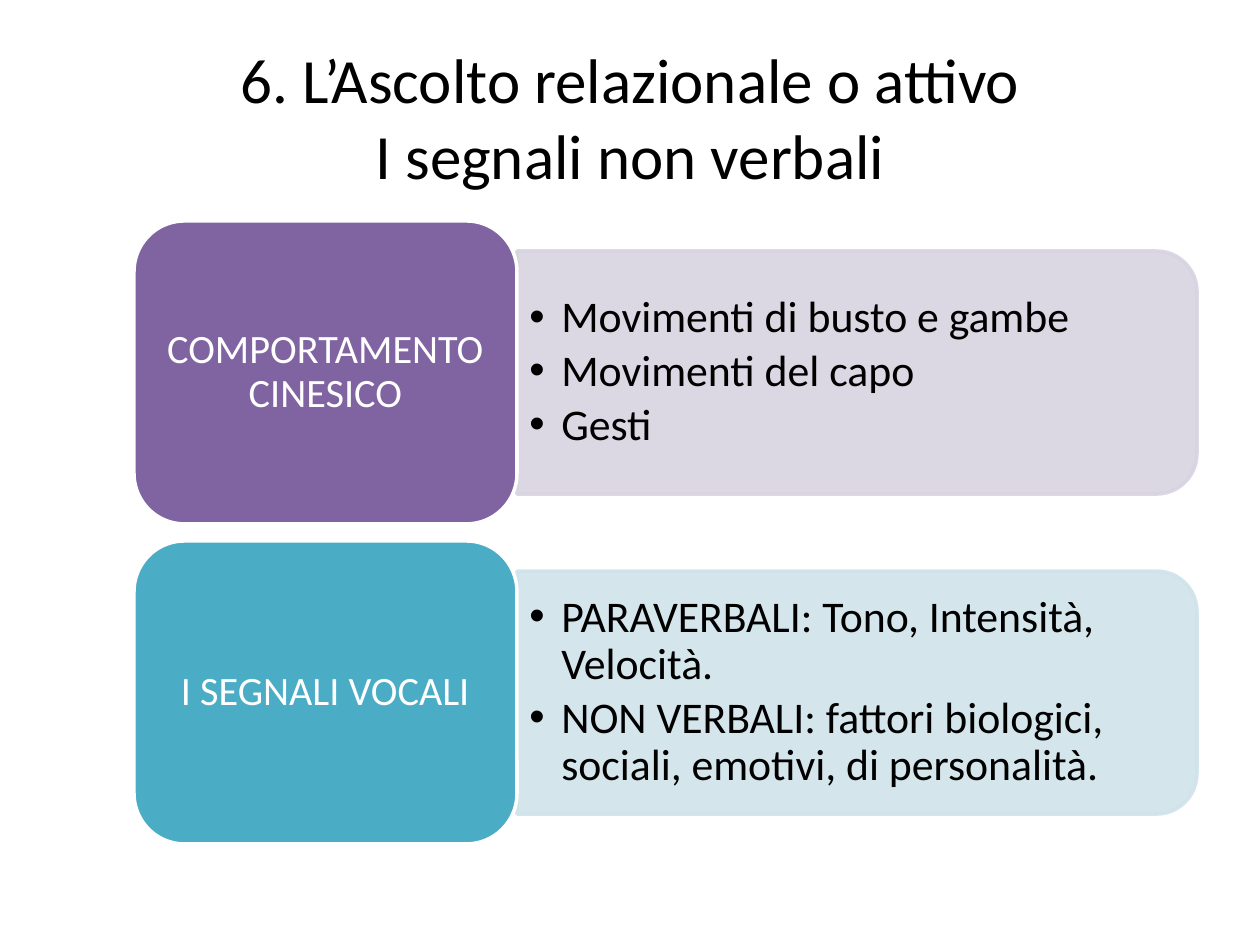
import pptx
import pptx.util
import pptx.dml.color
import pptx.enum.shapes
import pptx.enum.text
import pptx.oxml
import pptx.oxml.ns
from lxml import etree

TITLE = "6. L’Ascolto relazionale o attivo\vI segnali non verbali"
ROWS = [
    ("COMPORTAMENTO CINESICO", "8064A2", "D8D3E0",
     ["Movimenti di busto e gambe", "Movimenti del capo", "Gesti"]),
    ("I SEGNALI VOCALI", "4BACC6", "D0E3EA",
     ["PARAVERBALI: Tono, Intensità, Velocità.",
      "NON VERBALI: fattori biologici, sociali, emotivi, di personalità."]),
]
THEME = {"font": "Calibri", "dark": "000000", "light": "FFFFFF",
         "title": 36, "tile": 23, "item": 25, "line": 2, "alpha": 90}

# Lengths in px, 126 to the inch
SLIDE = (1260, 945)
HEAD = (63, 38, 1134, 157)
LEFT, TOP, STEP = 134, 221, 320
TILE = (383, 303)
PANEL = (680, 243)
NOTE = (669, 219)
INDENT = 32

SHAPE = pptx.enum.shapes.MSO_SHAPE
ALIGN = pptx.enum.text.PP_ALIGN
MIDDLE = pptx.enum.text.MSO_ANCHOR.MIDDLE
Pt = pptx.util.Pt
qn = pptx.oxml.ns.qn


def px(n):
    return pptx.util.Emu(round(n * 914400 / 126))


def box(*nums):
    return [px(n) for n in nums]


def rgb(code):
    return pptx.dml.color.RGBColor.from_string(code)


def style(frame, size, color, align):
    """Set the anchor, wrap, font and alignment of all text in a frame."""
    frame.word_wrap = True
    frame.vertical_anchor = MIDDLE
    for para in frame.paragraphs:
        para.alignment = align
        for run in para.runs:
            run.font.name = THEME["font"]
            run.font.size = Pt(size)
            run.font.color.rgb = rgb(color)


def paint(shape, fill, line):
    shape.shadow.inherit = False
    shape.fill.solid()
    shape.fill.fore_color.rgb = rgb(fill)
    shape.line.color.rgb = rgb(line)
    shape.line.width = Pt(THEME["line"])


def fade(shape):
    """Make the fill and the line slightly see-through."""
    for tone in shape.element.spPr.iter(qn("a:srgbClr")):
        etree.SubElement(tone, qn("a:alpha"), val=str(THEME["alpha"] * 1000))


def bullet(para):
    para.line_spacing = 0.9
    para.space_after = Pt(THEME["item"] * 0.15)
    props = para._p.get_or_add_pPr()
    props.set("marL", str(px(INDENT)))
    props.set("indent", str(-px(INDENT)))
    etree.SubElement(props, qn("a:buFont"), typeface="Arial")
    etree.SubElement(props, qn("a:buChar"), char="•")


def add_panel(shapes, x, mid, tint):
    """Add a bar with its right corners rounded, by a quarter turn."""
    wide, high = PANEL
    panel = shapes.add_shape(
        SHAPE.ROUND_2_SAME_RECTANGLE,
        *box(x + (wide - high) / 2, mid - wide / 2, high, wide))
    panel.rotation = 90
    paint(panel, tint, tint)
    fade(panel)


def add_note(shapes, x, mid, items):
    wide, high = NOTE
    note = shapes.add_textbox(*box(x, mid - high / 2, wide, high))
    frame = note.text_frame
    frame.text = "\n".join(items)
    style(frame, THEME["item"], THEME["dark"], ALIGN.LEFT)
    for para in frame.paragraphs:
        bullet(para)


def add_tile(shapes, y, label, color):
    tile = shapes.add_shape(SHAPE.ROUNDED_RECTANGLE, *box(LEFT, y, *TILE))
    paint(tile, color, THEME["light"])
    frame = tile.text_frame
    frame.text = label
    style(frame, THEME["tile"], THEME["light"], ALIGN.CENTER)
    frame.paragraphs[0].line_spacing = 0.9


def main():
    deck = pptx.Presentation()
    deck.slide_width, deck.slide_height = box(*SLIDE)
    slide = deck.slides.add_slide(deck.slide_layouts[5])
    shapes = slide.shapes

    title = shapes.title
    title.left, title.top, title.width, title.height = box(*HEAD)
    title.text_frame.text = TITLE
    style(title.text_frame, THEME["title"], THEME["dark"], ALIGN.CENTER)

    edge = LEFT + TILE[0]
    for i, (label, color, tint, items) in enumerate(ROWS):
        y = TOP + i * STEP
        mid = y + TILE[1] / 2
        add_panel(shapes, edge, mid, tint)
        add_note(shapes, edge, mid, items)
        add_tile(shapes, y, label, color)

    deck.save("out.pptx")


if __name__ == "__main__":
    main()
